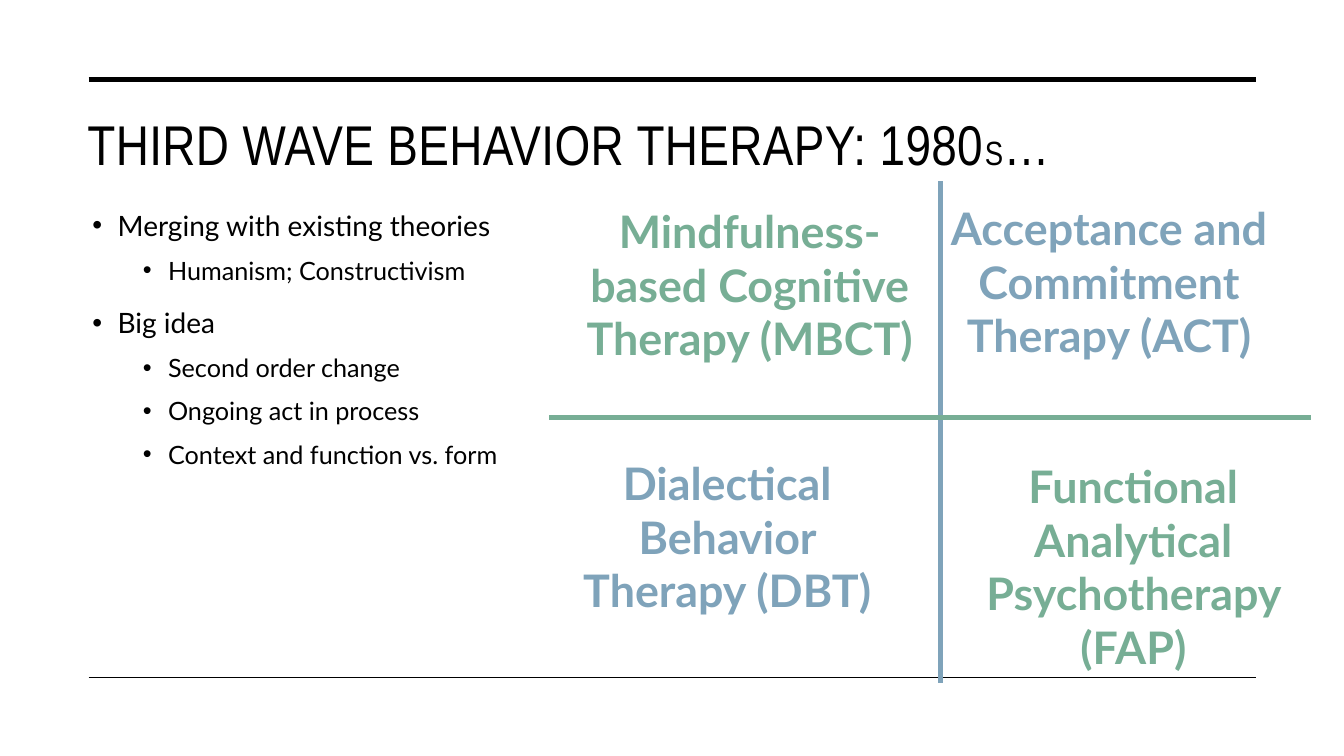
from pptx import Presentation
from pptx.dml.color import RGBColor
from pptx.enum import shapes, text
from pptx.oxml import ns
from pptx.util import Pt
from lxml import etree

BLACK = RGBColor(0x00, 0x00, 0x00)
BLUE = RGBColor(0x7F, 0xA3, 0xBA)
GREEN = RGBColor(0x77, 0xAE, 0x95)
HEADING_FONT, BODY_FONT = "Arial Narrow", "Lato"

# Content: title runs as (text, size); outline as (level, text)
TITLE = [("THIRD WAVE BEHAVIOR THERAPY: 1980", 40), ("S", 24), ("…", 40)]
OUTLINE = [
    (0, "Merging with existing theories"),
    (1, "Humanism; Constructivism"),
    (0, "Big idea"),
    (1, "Second order change"),
    (1, "Ongoing act in process"),
    (1, "Context and function vs. form"),
]
# Size, space before and left indent of each outline level
LEVELS = [(20, 10, 18), (18, 5, 54)]
HANGING = 18
# Therapies: text, colour, (left, top, width, height)
THERAPIES = [
    ("Acceptance and Commitment Therapy (ACT)", BLUE, (667.4, 139.7, 249.8, 123.8)),
    ("Dialectical Behavior Therapy (DBT)", BLUE, (394.6, 321.8, 249.8, 123.8)),
    ("Mindfulness-based Cognitive Therapy (MBCT)", GREEN, (397.4, 141.8, 276.5, 123.8)),
    ("Functional Analytical Psychotherapy (FAP)", GREEN, (684.7, 324, 249.8, 162.7)),
]
# Lines: start, end, colour, width
FRAME_RULES = [
    ((63.4, 56.9), (897.1, 56.9), BLACK, 3.5),
    ((63.4, 483.8), (897.1, 483.8), BLACK, 1),
]
QUADRANT_AXES = [
    ((671.8, 129.6), (671.8, 488.2), BLUE, 4),
    ((392.4, 298.1), (936.7, 298.1), GREEN, 4),
]

deck = Presentation()
deck.slide_width, deck.slide_height = Pt(960), Pt(540)
slide = deck.slides.add_slide(deck.slide_layouts[6])


def add_text_frame(box):
    frame = slide.shapes.add_textbox(*map(Pt, box)).text_frame
    frame.word_wrap = True
    frame.vertical_anchor = text.MSO_ANCHOR.TOP
    return frame


def style(font, name, size, color, bold=False):
    font.name, font.size, font.bold = name, Pt(size), bold
    font.color.rgb = color


def add_lines(lines):
    for start, end, color, width in lines:
        line = slide.shapes.add_connector(
            shapes.MSO_CONNECTOR.STRAIGHT, *map(Pt, start + end))
        line.line.color.rgb = color
        line.line.width = Pt(width)
        etree.SubElement(line._element.spPr, ns.qn("a:effectLst"))


# Title
title = add_text_frame((55.4, 71.3, 798.5, 107.3))
title.margin_top = Pt(6.6)
for words, size in TITLE:
    run = title.paragraphs[0].add_run()
    run.text = words
    style(run.font, HEADING_FONT, size, BLACK)
    run._r.get_or_add_rPr().set("spc", "30")

# Outline
outline = add_text_frame((59, 140.4, 333.4, 280.1))
outline.text = "\n".join(words for _, words in OUTLINE)
for point, (level, _) in zip(outline.paragraphs, OUTLINE):
    size, space_before, indent = LEVELS[level]
    point.level = level
    point.line_spacing = 1.2
    point.space_before = Pt(space_before)
    style(point.runs[0].font, BODY_FONT, size, BLACK)
    properties = point._p.get_or_add_pPr()
    properties.set("marL", str(Pt(indent)))
    properties.set("indent", str(-Pt(HANGING)))
    etree.SubElement(properties, ns.qn("a:buFont"), typeface="Arial")
    etree.SubElement(properties, ns.qn("a:buChar"), char="•")

add_lines(FRAME_RULES)

# Therapy quadrants
for words, color, box in THERAPIES:
    therapy = add_text_frame(box)
    therapy.auto_size = text.MSO_AUTO_SIZE.SHAPE_TO_FIT_TEXT
    therapy.text = words
    therapy.paragraphs[0].alignment = text.PP_ALIGN.CENTER
    style(therapy.paragraphs[0].runs[0].font, BODY_FONT, 32, color, bold=True)

add_lines(QUADRANT_AXES)

deck.save("out.pptx")
